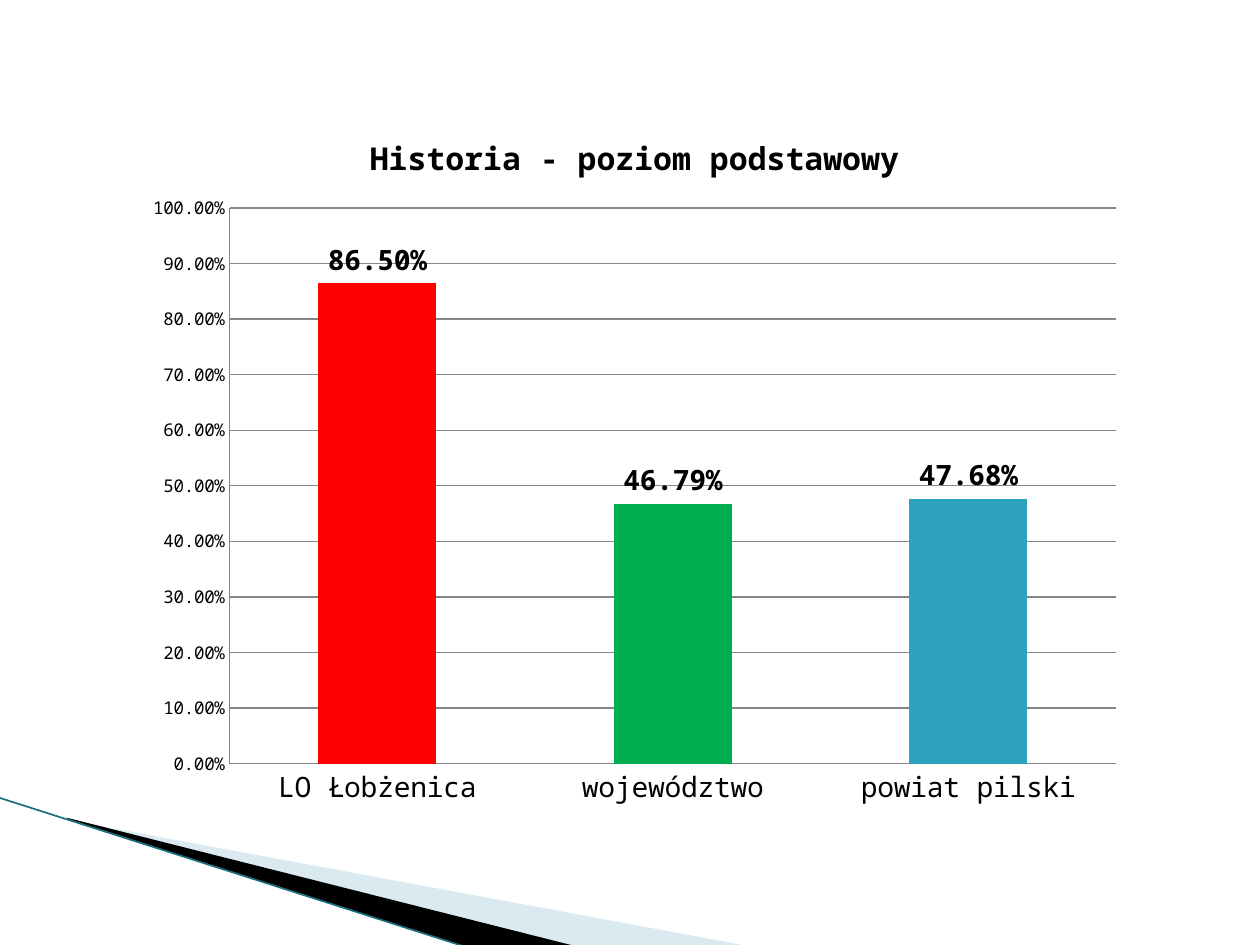
from lxml import etree
from pptx import Presentation
from pptx.chart.data import CategoryChartData as Data
from pptx.dml.color import RGBColor as RGB
from pptx.enum.chart import XL_CHART_TYPE as Kind, XL_LABEL_POSITION as Pos
from pptx.enum.chart import XL_TICK_MARK as Tick
from pptx.enum.shapes import MSO_CONNECTOR as Link
from pptx.oxml import parse_xml
from pptx.oxml.ns import nsdecls, qn
from pptx.util import Inches, Pt

HEX = {"pale": "A0CBDC", "black": "000000", "edge": "1A6E82", "grid": "868686",
       "red": "FF0000", "green": "00B050", "blue": "2DA2BF"}
COLOR = {name: RGB.from_string(code) for name, code in HEX.items()}
FACE = "Noto Sans Mono"


def style(font, **values):
    for key, value in {"name": FACE, "bold": False, **values}.items():
        setattr(font, key, value)
    font.color.rgb = COLOR["black"]


deck = Presentation()
deck.slide_width, deck.slide_height = Inches(10), Inches(7.5)
slide = deck.slides.add_slide(deck.slide_layouts[6])
shapes = slide.shapes

# Corner wedges
wedges = [
    ("pale", [(0.55, 6.51), (5.95, 7.51), (4.56, 7.51), (0.55, 6.5)]),
    ("black", [(0.53, 6.49), (4.57, 7.51), (3.72, 7.52), (0.54, 6.5)]),
]
for color, spots in wedges:
    first, *rest = [(Inches(x), Inches(y)) for x, y in spots]
    pen = shapes.build_freeform(*first)
    pen.add_line_segments(rest, close=True)
    wedge = pen.convert_to_shape()
    wedge.shadow.inherit = False
    wedge.fill.solid()
    wedge.fill.fore_color.rgb = COLOR[color]
    wedge.line.fill.background()
    if color == "pale":
        tint = wedge.fill._xPr.find(".//" + qn("a:srgbClr"))
        etree.SubElement(tint, qn("a:alpha"), val="40000")

# Corner edge line
edge = shapes.add_connector(Link.STRAIGHT, Inches(-0.01), Inches(6.33),
                            Inches(3.71), Inches(7.52))
edge.line.color.rgb = COLOR["edge"]
edge.line.width = Pt(0.95)
etree.SubElement(edge._element.spPr, qn("a:effectLst"))

# Chart
data = Data(number_format="0.00%")
data.categories = ["LO Łobżenica", "województwo", "powiat pilski"]
data.add_series("Series 1", [0.865, 0.4679, 0.4768])
chart = shapes.add_chart(Kind.COLUMN_CLUSTERED, Inches(1.06), Inches(0.84),
                         Inches(7.95), Inches(5.67), data).chart
style(chart.font, size=Pt(10))
chart.has_legend = False
chart.has_title = True
title = chart.chart_title
title.include_in_layout = False
title.text_frame.text = "Historia - poziom podstawowy"
style(title.text_frame.paragraphs[0].runs[0].font, size=Pt(18), bold=True)

# Plot area place, as shares of the chart
area = chart._chartSpace.chart.plotArea
for old in area.findall(qn("c:layout")):
    area.remove(old)
place = {"layoutTarget": "inner", "xMode": "edge", "yMode": "edge",
         "x": 0.096, "y": 0.143, "w": 0.885, "h": 0.778}
parts = "".join(f'<c:{key} val="{val}"/>' for key, val in place.items())
area.insert(0, parse_xml(f'<c:layout {nsdecls("c")}><c:manualLayout>{parts}'
                         '</c:manualLayout></c:layout>'))

# Axes
cat, val = chart.category_axis, chart.value_axis
for axis, size in ((cat, 16), (val, 10)):
    axis.major_tick_mark = axis.minor_tick_mark = Tick.NONE
    style(axis.tick_labels.font, size=Pt(size))
    axis.format.line.color.rgb = COLOR["grid"]
    axis.format.line.width = Pt(0.75)
val.minimum_scale, val.maximum_scale, val.major_unit = 0, 1, 0.1
val.tick_labels.number_format = "0.00%"
val.tick_labels.number_format_is_linked = False
val.has_major_gridlines = True
grid = val.major_gridlines.format.line
grid.color.rgb, grid.width = COLOR["grid"], Pt(0.75)

# Bars and their labels
plot = chart.plots[0]
plot.gap_width = 150
plot.vary_by_categories = False
bars = plot.series[0]
fills = [bars.format.fill] + [bars.points[i].format.fill for i in range(2)]
for fill, color in zip(fills, ("blue", "red", "green")):
    fill.solid()
    fill.fore_color.rgb = COLOR[color]
labels = bars.data_labels
look = {"show_value": True, "number_format": "0.00%",
        "number_format_is_linked": False, "position": Pos.OUTSIDE_END}
for key, value in look.items():
    setattr(labels, key, value)
style(labels.font, size=Pt(16), bold=True)

deck.save("out.pptx")
